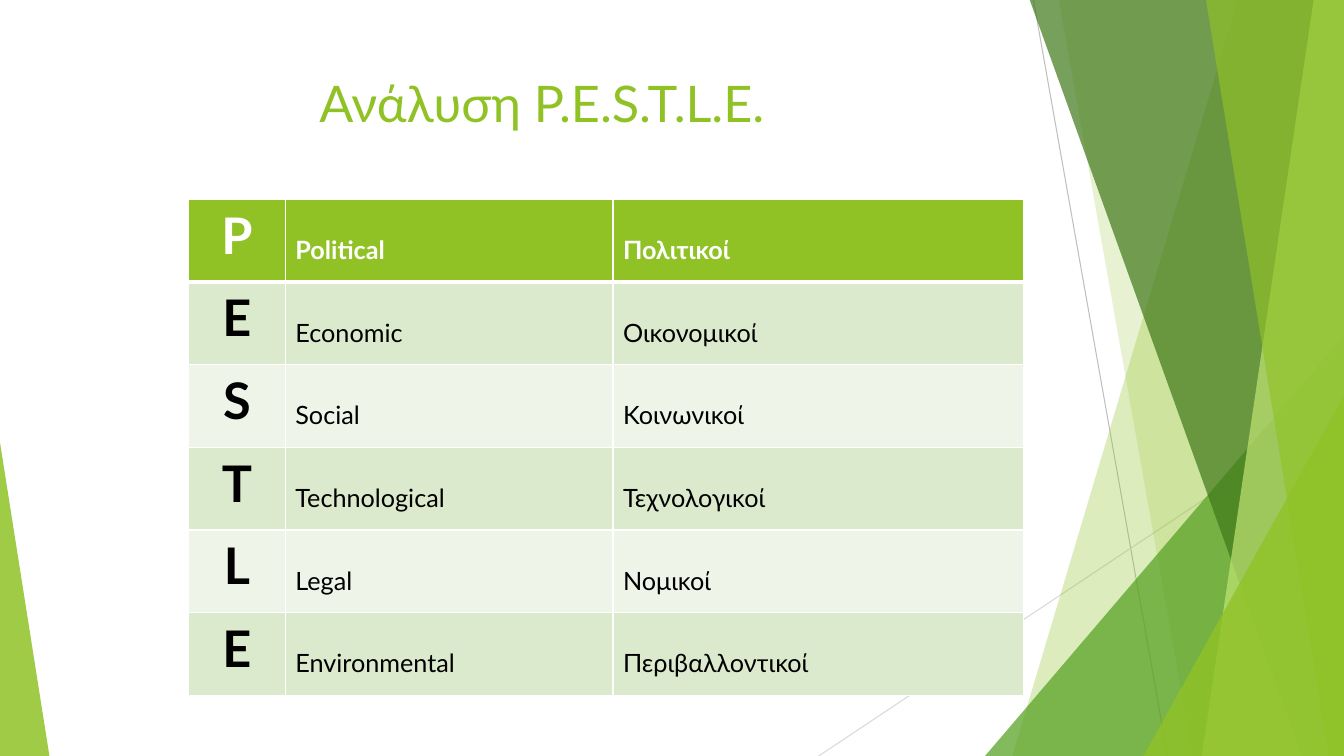
from lxml import etree
from pptx import Presentation
from pptx.dml.color import RGBColor
from pptx.enum.shapes import MSO_CONNECTOR, MSO_SHAPE
from pptx.enum.text import MSO_ANCHOR, PP_ALIGN
from pptx.oxml.ns import qn
from pptx.util import Inches, Pt

COLORS = {
    "green": "90C226", "leaf": "54A021", "forest": "3F7819", "lime": "C0E474",
    "gray": "BFBFBF", "light gray": "D9D9D9", "white": "FFFFFF", "black": "000000",
    "dark band": "DBE9CD", "light band": "EEF4E8",
}
WIDTH, HEIGHT = 13.33, 7.5


def paint(fill, color, opacity=100):
    fill.solid()
    fill.fore_color.rgb = RGBColor.from_string(COLORS[color])
    if opacity < 100:
        color_element = fill._xPr.find(qn("a:solidFill"))[0]
        etree.SubElement(color_element, qn("a:alpha"), val=str(opacity * 1000))


def write(text_frame, text, align=PP_ALIGN.LEFT, **font_format):
    paragraph = text_frame.paragraphs[0]
    paragraph.alignment = align
    run = paragraph.add_run()
    run.text = text
    run.font.color.rgb = RGBColor.from_string(COLORS[font_format.pop("color")])
    for name, value in {"name": "Lato", **font_format}.items():
        setattr(run.font, name, value)


presentation = Presentation()
presentation.slide_width = Inches(WIDTH)
presentation.slide_height = Inches(HEIGHT)
slide = presentation.slides.add_slide(presentation.slide_layouts[6])
shapes = slide.shapes

# Thin lines behind the facets
for x1, y1, x2, y2, color in [
    (10.25, 0, 11.58, HEIGHT, "gray"),
    (WIDTH, 4.03, 8.12, HEIGHT, "light gray"),
]:
    line = shapes.add_connector(
        MSO_CONNECTOR.STRAIGHT, Inches(x1), Inches(y1), Inches(x2), Inches(y2))
    line.line.width = Pt(0.75)
    line.line.color.rgb = RGBColor.from_string(COLORS[color])
    etree.SubElement(line._element.spPr, qn("a:effectLst"))

# Facets: a band runs from its left edge to the right side of the slide,
# a triangle stands on the bottom of the slide
FACETS = [
    ("band", 12.28, 10.04, "green", 30),
    ("band", 10.5, 11.83, "green", 20),
    ("triangle", 9.77, 3.56, 4.17, 1, "leaf", 72),
    ("band", 10.21, 12.91, "forest", 70),
    ("band", 13.03, 11.92, "lime", 70),
    ("band", 11.96, 13.18, "green", 65),
    ("triangle", 11.34, 1.99, 3.57, 1, "green", 80),
    ("triangle", 0, 0.49, 3.11, 0, "green", 85),
]
for kind, *geometry, color, opacity in FACETS:
    if kind == "band":
        top_x, bottom_x = geometry
        builder = shapes.build_freeform(Inches(top_x), Inches(-0.01))
        builder.add_line_segments([
            (Inches(x), Inches(y))
            for x, y in [(WIDTH, -0.01), (WIDTH, HEIGHT), (bottom_x, HEIGHT)]
        ])
        facet = builder.convert_to_shape()
    else:
        left, width, height, apex = geometry
        facet = shapes.add_shape(
            MSO_SHAPE.ISOSCELES_TRIANGLE, Inches(left), Inches(HEIGHT - height),
            Inches(width), Inches(height))
        facet.adjustments[0] = apex
    facet.shadow.inherit = False
    facet.line.fill.background()
    paint(facet.fill, color, opacity)

# Title
title = shapes.add_textbox(Inches(0.74), Inches(0.67), Inches(9.4), Inches(1.44))
title.text_frame.word_wrap = True
write(title.text_frame, "Ανάλυση P.E.S.T.L.E. ", PP_ALIGN.CENTER,
      size=Pt(36), color="green")

# Table of factors
FACTORS = [
    ("Political", "Πολιτικοί"),
    ("Economic", "Οικονομικοί"),
    ("Social", "Κοινωνικοί"),
    ("Technological", "Τεχνολογικοί"),
    ("Legal", "Νομικοί"),
    ("Environmental", "Περιβαλλοντικοί"),
]
COLUMN_WIDTHS = [0.96, 3.25, 4.07]
ROW_HEIGHT = 0.82
table = shapes.add_table(
    len(FACTORS), len(COLUMN_WIDTHS), Inches(1.87), Inches(1.98),
    Inches(sum(COLUMN_WIDTHS)), Inches(ROW_HEIGHT * len(FACTORS))).table
for column, width in zip(table.columns, COLUMN_WIDTHS):
    column.width = Inches(width)

for row, (english, greek) in enumerate(FACTORS):
    table.rows[row].height = Inches(ROW_HEIGHT)
    is_header = row == 0
    band = "green" if is_header else "dark band" if row % 2 else "light band"
    text_color = "white" if is_header else "black"
    for column, text in enumerate([english[0], english, greek]):
        cell = table.cell(row, column)
        cell.vertical_anchor = MSO_ANCHOR.TOP
        paint(cell.fill, band)
        if column == 0:
            write(cell.text_frame, text, PP_ALIGN.CENTER,
                  size=Pt(36), bold=True, color=text_color)
        else:
            cell.margin_top = Inches(0.35)
            write(cell.text_frame, text, size=Pt(18), bold=is_header, color=text_color)

        # White borders, thicker under the header
        borders = {"lnL": 1, "lnR": 1, "lnT": 3 if row == 1 else 1,
                   "lnB": 3 if is_header else 1}
        for index, (side, points) in enumerate(borders.items()):
            border = etree.Element(qn(f"a:{side}"), w=str(Pt(points)))
            border_fill = etree.SubElement(border, qn("a:solidFill"))
            etree.SubElement(border_fill, qn("a:srgbClr"), val=COLORS["white"])
            cell._tc.get_or_add_tcPr().insert(index, border)

presentation.save("out.pptx")
